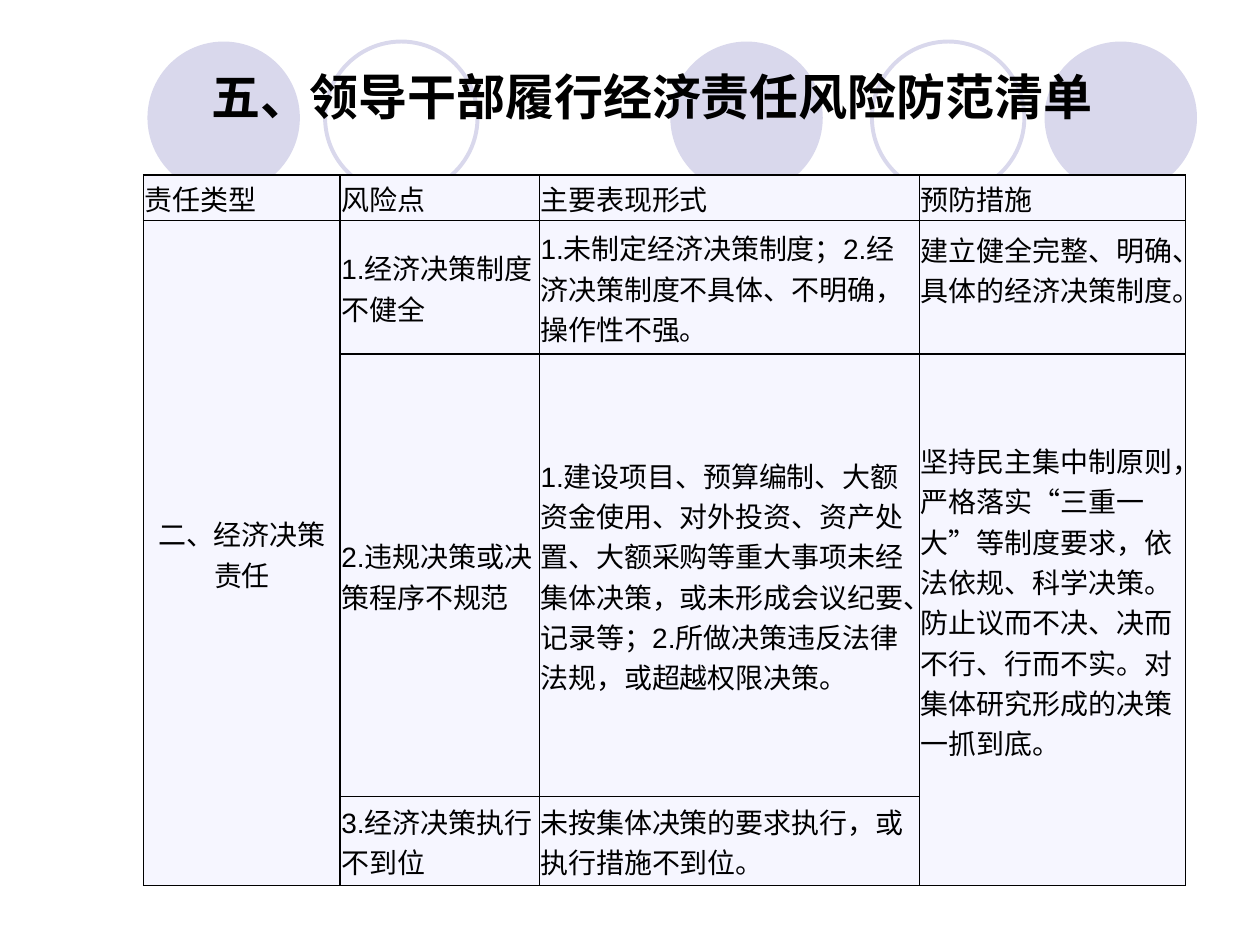
from dataclasses import dataclass

from lxml import etree
from pptx import Presentation
from pptx.dml.color import RGBColor
from pptx.enum.shapes import MSO_SHAPE
from pptx.enum.text import MSO_ANCHOR, PP_ALIGN
from pptx.oxml.ns import qn
from pptx.util import Inches, Pt

OVAL = MSO_SHAPE.OVAL
MIDDLE = MSO_ANCHOR.MIDDLE
CENTER, LEFT = PP_ALIGN.CENTER, PP_ALIGN.LEFT
TITLE_ONLY = 5


@dataclass(frozen=True)
class Theme:
    ink: str = "000000"
    circle: str = "D9D8EC"
    cell: str = "F6F6FF"
    title_font: str = "Times New Roman"
    body_font: str = "Arial"
    title_size: int = 28
    body_size: int = 16
    ring_width: float = 2.25
    border_width: float = 1


THEME = Theme()

CIRCLES = [(0, True), (1.41, False), (4.15, True), (5.75, False), (7.12, True)]
CIRCLE_SIZE = 1.21

COLUMN_WIDTHS = [1.56, 1.58, 3.02, 2.11]
ROW_HEIGHTS = [0.36, 1.06, 3.51, 0.71]
CELL_MARGIN = 0.01
MEASURE_BOTTOM_MARGIN = 0.3
MERGES = [((1, 0), (3, 0)), ((2, 3), (3, 3))]
RISKS = [
    ["责任类型", "风险点", "主要表现形式", "预防措施"],
    ["二、经济决策责任", "1.经济决策制度不健全",
     "1.未制定经济决策制度；2.经济决策制度不具体、不明确，操作性不强。",
     "建立健全完整、明确、具体的经济决策制度。"],
    ["", "2.违规决策或决策程序不规范",
     "1.建设项目、预算编制、大额资金使用、对外投资、资产处置、大额采购等重大事项"
     "未经集体决策，或未形成会议纪要、记录等；2.所做决策违反法律法规，或超越权限决策。",
     "坚持民主集中制原则，严格落实“三重一大”等制度要求，依法依规、科学决策。"
     "防止议而不决、决而不行、行而不实。对集体研究形成的决策一抓到底。"],
    ["", "3.经济决策执行不到位", "未按集体决策的要求执行，或执行措施不到位。", ""],
]


def rgb(value):
    return RGBColor.from_string(value)


def format_text(frame, font_name, size, align, bold=False):
    for paragraph in frame.paragraphs:
        paragraph.alignment = align
        for run in paragraph.runs:
            run.font.name = font_name
            run.font.size = Pt(size)
            run.font.bold = bold
            run.font.color.rgb = rgb(THEME.ink)


def add_circles(slide, left, top):
    for offset, filled in CIRCLES:
        circle = slide.shapes.add_shape(
            OVAL, Inches(left + offset), Inches(top),
            Inches(CIRCLE_SIZE), Inches(CIRCLE_SIZE))
        circle.shadow.inherit = False
        if filled:
            circle.fill.solid()
            circle.fill.fore_color.rgb = rgb(THEME.circle)
            circle.line.fill.background()
        else:
            circle.fill.background()
            circle.line.color.rgb = rgb(THEME.circle)
            circle.line.width = Pt(THEME.ring_width)


def place_title(slide, left, top, width, height):
    title = slide.shapes.title
    title.left, title.top = Inches(left), Inches(top)
    title.width, title.height = Inches(width), Inches(height)
    frame = title.text_frame
    frame.text = "五、领导干部履行经济责任风险防范清单"
    frame.vertical_anchor = MIDDLE
    frame.word_wrap = True
    format_text(frame, THEME.title_font, THEME.title_size, CENTER, bold=True)
    slide.shapes._spTree.append(title._element)


def add_borders(cell):
    properties = cell._tc.get_or_add_tcPr()
    for index, side in enumerate(("a:lnL", "a:lnR", "a:lnT", "a:lnB")):
        border = etree.Element(qn(side), w=str(Pt(THEME.border_width)))
        fill = etree.SubElement(border, qn("a:solidFill"))
        etree.SubElement(fill, qn("a:srgbClr"), val=THEME.ink)
        properties.insert(index, border)


def format_cell(cell, text, row, column):
    cell.fill.solid()
    cell.fill.fore_color.rgb = rgb(THEME.cell)
    add_borders(cell)
    cell.vertical_anchor = MIDDLE
    cell.margin_left = cell.margin_right = cell.margin_top = Inches(CELL_MARGIN)
    is_measure = row > 0 and column == 3
    cell.margin_bottom = Inches(MEASURE_BOTTOM_MARGIN if is_measure else 0)
    if text:
        cell.text_frame.text = text
        align = CENTER if row > 0 and column == 0 else LEFT
        format_text(cell.text_frame, THEME.body_font, THEME.body_size, align)


def add_risk_table(slide, left, top):
    table = slide.shapes.add_table(
        len(ROW_HEIGHTS), len(COLUMN_WIDTHS), Inches(left), Inches(top),
        Inches(sum(COLUMN_WIDTHS)), Inches(sum(ROW_HEIGHTS))).table
    table.horz_banding = False
    table.first_row = False
    for column, width in zip(table.columns, COLUMN_WIDTHS):
        column.width = Inches(width)
    for row, height in zip(table.rows, ROW_HEIGHTS):
        row.height = Inches(height)
    for start, end in MERGES:
        table.cell(*start).merge(table.cell(*end))
    for row, texts in enumerate(RISKS):
        for column, text in enumerate(texts):
            format_cell(table.cell(row, column), text, row, column)


def main():
    presentation = Presentation()
    presentation.slide_width, presentation.slide_height = Inches(10), Inches(7.5)
    slide = presentation.slides.add_slide(presentation.slide_layouts[TITLE_ONLY])
    add_circles(slide, 1.17, 0.33)
    place_title(slide, 1.17, 0.48, 8.01, 0.57)
    add_risk_table(slide, 1.14, 1.39)
    presentation.save("out.pptx")


if __name__ == "__main__":
    main()
